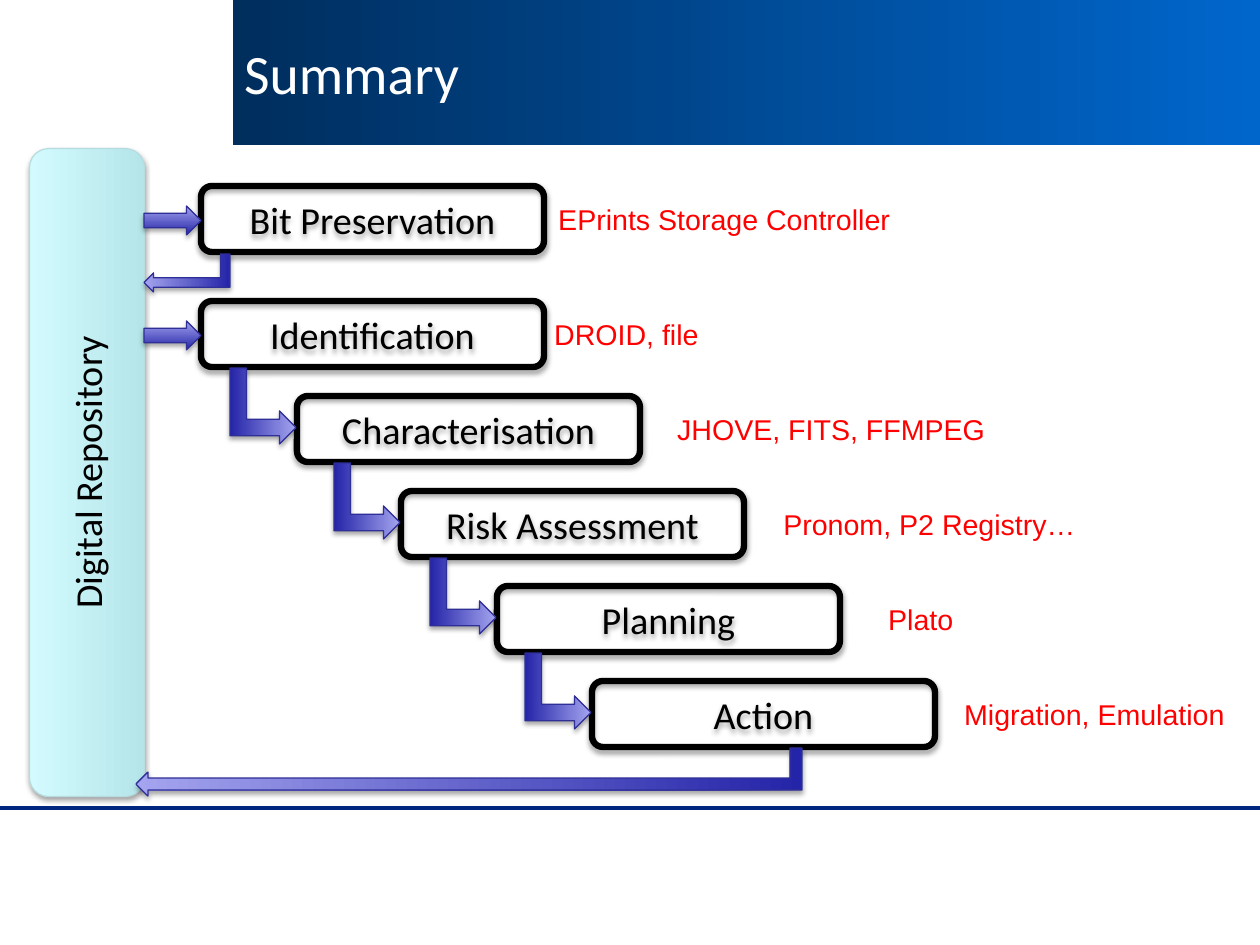
from typing import NamedTuple

import lxml.etree
import pptx
import pptx.dml.color
import pptx.enum.shapes
import pptx.enum.text
import pptx.oxml.ns
import pptx.util

SHAPE = pptx.enum.shapes.MSO_SHAPE
ALIGN = pptx.enum.text.PP_ALIGN
qn = pptx.oxml.ns.qn

PX = 8000  # EMU per px
BOX_W, BOX_H = 343, 66
ARROW_FILL = ("2424A8", "A4A4EF")
ARROW_LINE = "2F2F98"


class Step(NamedTuple):
    name: str
    x: int
    y: int
    tools: str
    tools_x: int
    tools_w: int


class Arrow(NamedTuple):
    kind: int
    x: int
    y: int
    w: int
    h: int
    rotation: int = 0
    flip: str = ""


FIRST_Y, PITCH = 301, 95
STEPS = [
    Step("Bit Preservation", 201, 186, "EPrints Storage Controller", 547, 358),
    Step("Identification", 201, FIRST_Y, "DROID, file", 543, 169),
    Step("Characterisation", 297, FIRST_Y + PITCH, "JHOVE, FITS, FFMPEG", 666, 334),
    Step("Risk Assessment", 401, FIRST_Y + 2 * PITCH, "Pronom, P2 Registry…", 772, 318),
    Step("Planning", 497, FIRST_Y + 3 * PITCH, "Plato", 877, 89),
    Step("Action", 592, FIRST_Y + 4 * PITCH, "Migration, Emulation", 953, 286),
]
INPUTS = [Arrow(SHAPE.LEFT_ARROW, 144, s.y + 20, 57, 29, flip="flipH") for s in STEPS[:2]]
DESCENTS = [Arrow(SHAPE.BENT_UP_ARROW, s.x - 72, s.y - 23, 76, 66, 90) for s in STEPS[2:]]
RETURNS = [
    Arrow(SHAPE.BENT_UP_ARROW, 168, 230, 38, 86, 90, "flipV"),
    Arrow(SHAPE.BENT_UP_ARROW, 445, 439, 48, 666, 90, "flipV"),
]


def rgb(color: str) -> pptx.dml.color.RGBColor:
    return pptx.dml.color.RGBColor.from_string(color)


def add_shape(slide, kind: int, x: int, y: int, w: int, h: int):
    """Add a plain shape without fill, line or shadow."""
    sp = slide.shapes.add_shape(kind, x * PX, y * PX, w * PX, h * PX)
    sp.shadow.inherit = False
    sp.fill.background()
    sp.line.fill.background()
    return sp


def set_gradient(sp, colors: tuple[str, str], angle: int) -> None:
    """Fill with two colours; the angle runs counterclockwise."""
    sp.fill.gradient()
    sp.fill.gradient_angle = angle
    for stop, color, position in zip(sp.fill.gradient_stops, colors, (0, 1)):
        stop.color.rgb = rgb(color)
        stop.position = position


def set_line(sp, color: str, width: float) -> None:
    sp.line.color.rgb = rgb(color)
    sp.line.width = pptx.util.Pt(width)


def add_shadow(sp) -> None:
    effects = sp._element.spPr.find(qn("a:effectLst"))
    shadow = lxml.etree.SubElement(
        effects, qn("a:outerShdw"), blurRad="40000", dist="23000",
        dir="5400000", rotWithShape="0")
    color = lxml.etree.SubElement(shadow, qn("a:srgbClr"), val="000000")
    lxml.etree.SubElement(color, qn("a:alpha"), val="35000")


def set_text(sp, text: str, size: int, font: str, color: str, align) -> None:
    tf = sp.text_frame
    tf.text = text
    tf.vertical_anchor = pptx.enum.text.MSO_ANCHOR.MIDDLE
    p = tf.paragraphs[0]
    p.alignment = align
    r = p.runs[0]
    r.font.size = pptx.util.Pt(size)
    r.font.name = font
    r.font.color.rgb = rgb(color)


def add_header(slide) -> None:
    sp = add_shape(slide, SHAPE.RECTANGLE, 233, 0, 1027, 145)
    set_gradient(sp, ("002E5D", "0066CC"), 0)
    set_text(sp, "Summary", 35, "Calibri", "FFFFFF", ALIGN.LEFT)


def add_footer_rule(slide) -> None:
    line = slide.shapes.add_connector(
        pptx.enum.shapes.MSO_CONNECTOR.STRAIGHT, 0, 808 * PX, 1260 * PX, 808 * PX)
    set_line(line, "00267F", 3)
    lxml.etree.SubElement(line._element.spPr, qn("a:effectLst"))


def add_repository(slide) -> None:
    sp = add_shape(slide, SHAPE.ROUNDED_RECTANGLE, -237, 415, 648, 115)
    sp.rotation = 270
    set_gradient(sp, ("B5E5E9", "D3FBFF"), 90)
    set_line(sp, "B6DCDF", 0.75)
    add_shadow(sp)
    set_text(sp, "Digital Repository", 24, "Calibri", "000000", ALIGN.CENTER)


def add_step(slide, step: Step) -> None:
    sp = add_shape(slide, SHAPE.ROUNDED_RECTANGLE, step.x, step.y, BOX_W, BOX_H)
    set_line(sp, "000000", 4)
    add_shadow(sp)
    set_text(sp, step.name, 24, "Calibri", "000000", ALIGN.CENTER)


def add_arrow(slide, arrow: Arrow) -> None:
    sp = add_shape(slide, arrow.kind, arrow.x, arrow.y, arrow.w, arrow.h)
    sp.rotation = arrow.rotation
    if arrow.flip:
        sp._element.spPr.find(qn("a:xfrm")).set(arrow.flip, "1")
    set_gradient(sp, ARROW_FILL, 90)
    set_line(sp, ARROW_LINE, 0.75)
    add_shadow(sp)


def add_tools(slide, step: Step) -> None:
    sp = slide.shapes.add_textbox(
        step.tools_x * PX, (step.y + 10) * PX, step.tools_w * PX, 46 * PX)
    sp.text_frame.word_wrap = False
    set_text(sp, step.tools, 18, "Arial", "FF0000", ALIGN.LEFT)


def main() -> None:
    prs = pptx.Presentation()
    prs.slide_width, prs.slide_height = 1260 * PX, 945 * PX
    slide = prs.slides.add_slide(prs.slide_layouts[6])
    add_footer_rule(slide)
    add_header(slide)
    add_repository(slide)
    for step in STEPS:
        add_step(slide, step)
    for arrow in INPUTS + DESCENTS + RETURNS:
        add_arrow(slide, arrow)
    for step in STEPS:
        add_tools(slide, step)
    prs.save("out.pptx")


if __name__ == "__main__":
    main()
